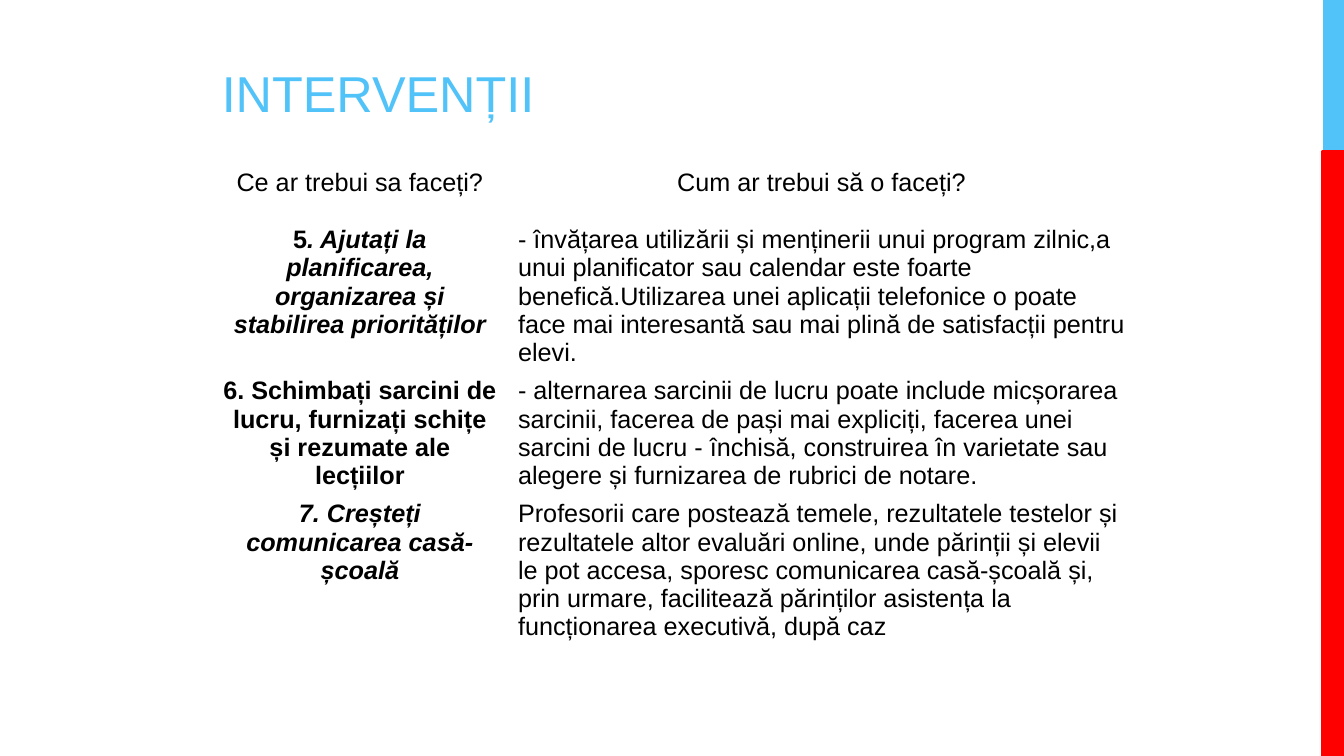
import dataclasses
import typing

import pptx
import pptx.dml.color
import pptx.enum.shapes
import pptx.enum.text
import pptx.util

WIDTH = pptx.util.Inches(13.33)
HEIGHT = pptx.util.Inches(7.5)
GRID_COLUMNS = 64
GRID_ROWS = 60
FONT = "Arial"
BLUE = "51C3F9"
RED = "FF0000"
BLACK = "000000"
CENTER = pptx.enum.text.PP_ALIGN.CENTER
LEFT = pptx.enum.text.PP_ALIGN.LEFT

Alignment = pptx.enum.text.PP_ALIGN


@dataclasses.dataclass(frozen=True)
class Area:
    column: float
    row: float
    columns: float
    rows: float


@dataclasses.dataclass(frozen=True)
class Bar:
    area: Area
    color: str
    outline: float = 0


@dataclasses.dataclass(frozen=True)
class Span:
    text: str
    bold: bool = False
    italic: bool = False


@dataclasses.dataclass(frozen=True)
class TableRow:
    rows: float
    question: tuple[Span, ...]
    answer: str
    answer_alignment: Alignment = LEFT


BARS = (
    Bar(Area(63, 0, 1, 12), BLUE),
    Bar(Area(63, 12, 1, 48), RED, 2.25),
)
TITLE_AREA = Area(10.08, 4.16, 30.4, 6)
TABLE_COLUMNS = (14.11, 29.86)
TABLE_ROWS = (
    TableRow(
        4.56,
        (Span("Ce ar trebui sa faceți?"),),
        "Cum ar trebui să o faceți?",
        CENTER,
    ),
    TableRow(
        10.64,
        (
            Span("5", bold=True),
            Span(
                ". Ajutați la planificarea, organizarea și stabilirea priorităților",
                bold=True,
                italic=True,
            ),
        ),
        "- învățarea utilizării și menținerii unui program zilnic,a unui planificator "
        "sau calendar este foarte benefică.Utilizarea unei aplicații telefonice o poate "
        "face mai interesantă sau mai plină de satisfacții pentru elevi.",
    ),
    TableRow(
        8.8,
        (
            Span(
                "6. Schimbați sarcini de lucru, furnizați schițe și rezumate ale lecțiilor",
                bold=True,
            ),
        ),
        "- alternarea sarcinii de lucru poate include micșorarea sarcinii, facerea de "
        "pași mai expliciți, facerea unei sarcini de lucru - închisă, construirea în "
        "varietate sau alegere și furnizarea de rubrici de notare.",
    ),
    TableRow(
        7.84,
        (Span("7. Creșteți comunicarea casă-școală", bold=True, italic=True),),
        "Profesorii care postează temele, rezultatele testelor și rezultatele altor "
        "evaluări online, unde părinții și elevii le pot accesa, sporesc comunicarea "
        "casă-școală și, prin urmare, facilitează părinților asistența la funcționarea "
        "executivă, după caz",
    ),
)
TABLE_AREA = Area(10.08, 12.96, sum(TABLE_COLUMNS), sum(row.rows for row in TABLE_ROWS))


def across(columns: float) -> int:
    return round(WIDTH * columns / GRID_COLUMNS)


def down(rows: float) -> int:
    return round(HEIGHT * rows / GRID_ROWS)


def place(area: Area) -> tuple[int, int, int, int]:
    return across(area.column), down(area.row), across(area.columns), down(area.rows)


def color(value: str) -> pptx.dml.color.RGBColor:
    return pptx.dml.color.RGBColor.from_string(value)


def write(
    box: typing.Any,
    spans: typing.Iterable[Span],
    size: float,
    text_color: str,
    alignment: Alignment,
) -> None:
    para = box.text_frame.paragraphs[0]
    para.alignment = alignment
    for span in spans:
        run = para.add_run()
        run.text = span.text
        run.font.name = FONT
        run.font.size = pptx.util.Pt(size)
        run.font.bold = span.bold
        run.font.italic = span.italic
        run.font.color.rgb = color(text_color)


def draw_bar(page: typing.Any, bar: Bar) -> None:
    rectangle = pptx.enum.shapes.MSO_SHAPE.RECTANGLE
    shape = page.shapes.add_shape(rectangle, *place(bar.area))
    shape.shadow.inherit = False
    shape.fill.solid()
    shape.fill.fore_color.rgb = color(bar.color)
    if bar.outline:
        shape.line.color.rgb = color(bar.color)
        shape.line.width = pptx.util.Pt(bar.outline)
    else:
        shape.line.fill.background()


def draw_title(page: typing.Any) -> None:
    title = page.shapes.title
    title.left, title.top, title.width, title.height = place(TITLE_AREA)
    title.text_frame.vertical_anchor = pptx.enum.text.MSO_ANCHOR.BOTTOM
    title.text_frame.auto_size = pptx.enum.text.MSO_AUTO_SIZE.NONE
    write(title, (Span("INTERVENȚII"),), 36, BLUE, LEFT)


def draw_table(page: typing.Any) -> None:
    table = page.shapes.add_table(
        len(TABLE_ROWS), len(TABLE_COLUMNS), *place(TABLE_AREA)
    ).table
    table.first_row = False
    table.horz_banding = False
    for column, columns in zip(table.columns, TABLE_COLUMNS):
        column.width = across(columns)
    for row, content in zip(table.rows, TABLE_ROWS):
        row.height = down(content.rows)
        question, answer = row.cells
        for cell in (question, answer):
            cell.fill.background()
        write(question, content.question, 18, BLACK, CENTER)
        write(answer, (Span(content.answer),), 18, BLACK, content.answer_alignment)


def main() -> None:
    deck = pptx.Presentation()
    deck.slide_width = WIDTH
    deck.slide_height = HEIGHT
    page = deck.slides.add_slide(deck.slide_layouts.get_by_name("Title Only"))
    for bar in BARS:
        draw_bar(page, bar)
    draw_title(page)
    draw_table(page)
    deck.save("out.pptx")


if __name__ == "__main__":
    main()
